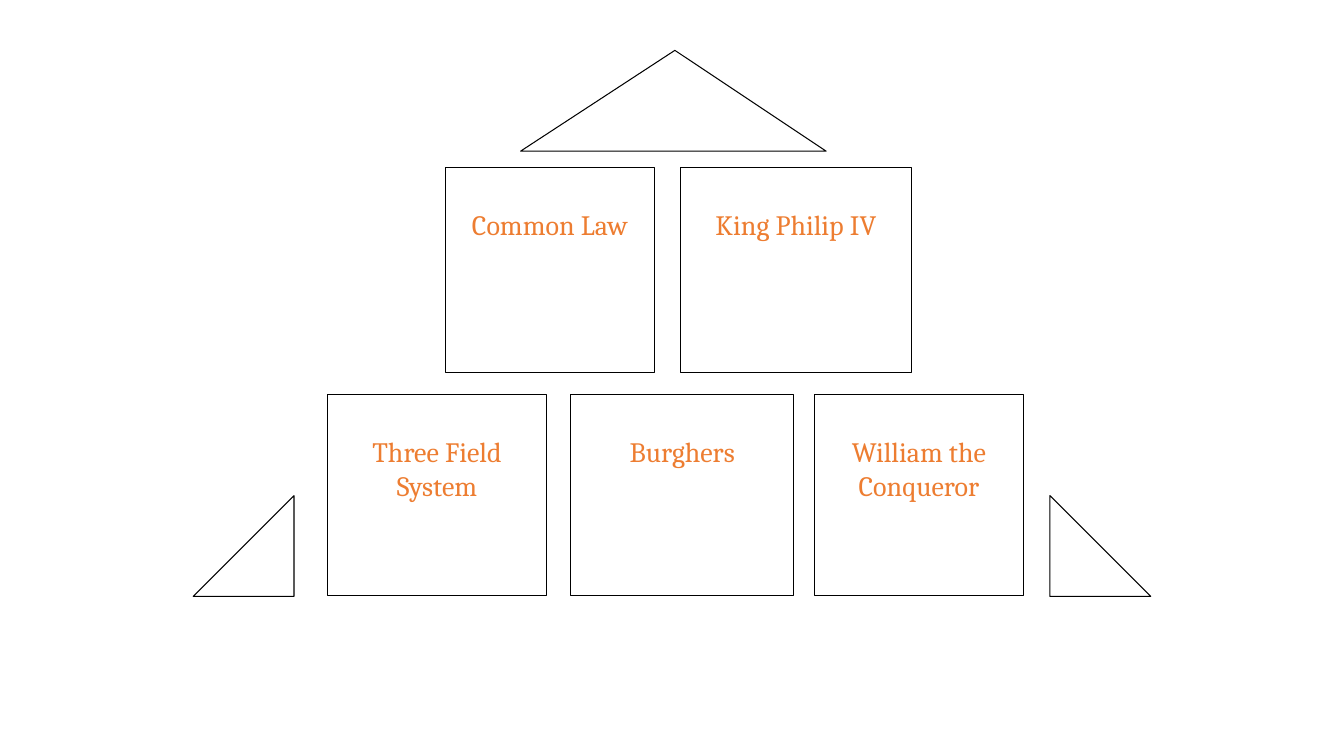
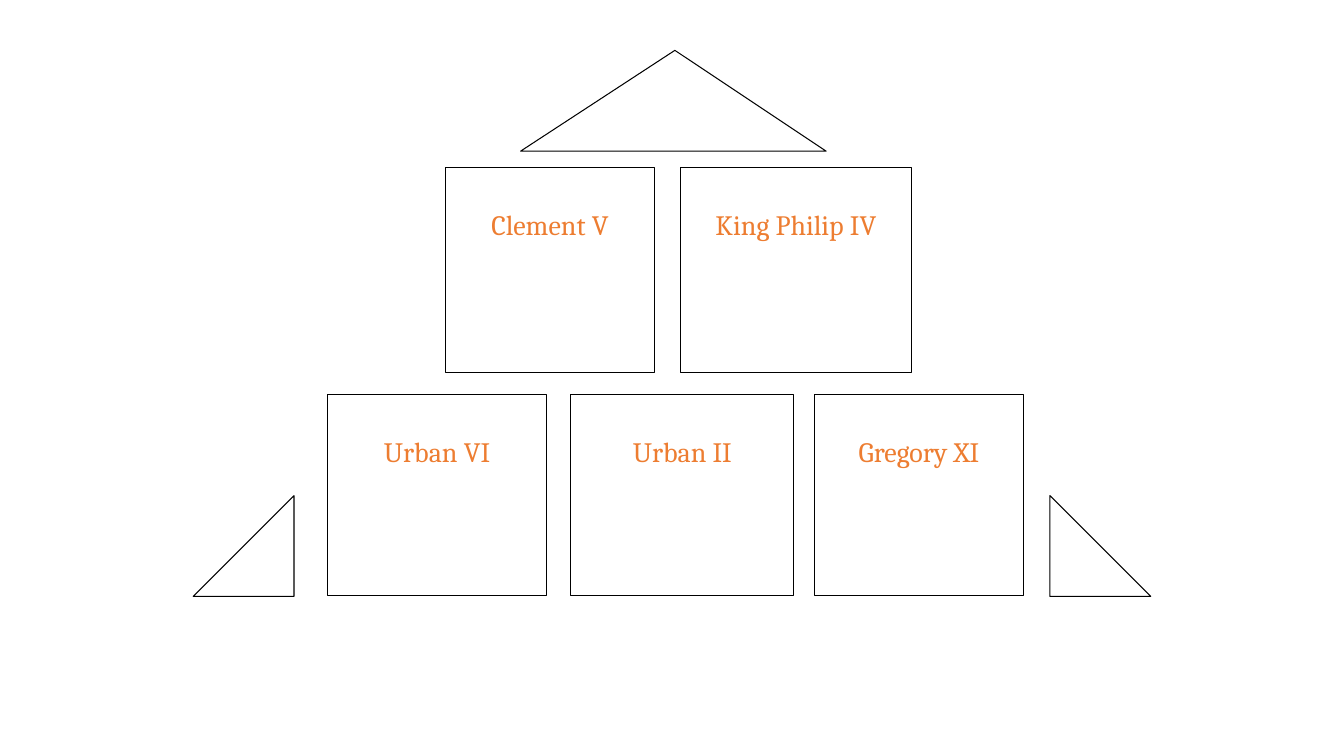
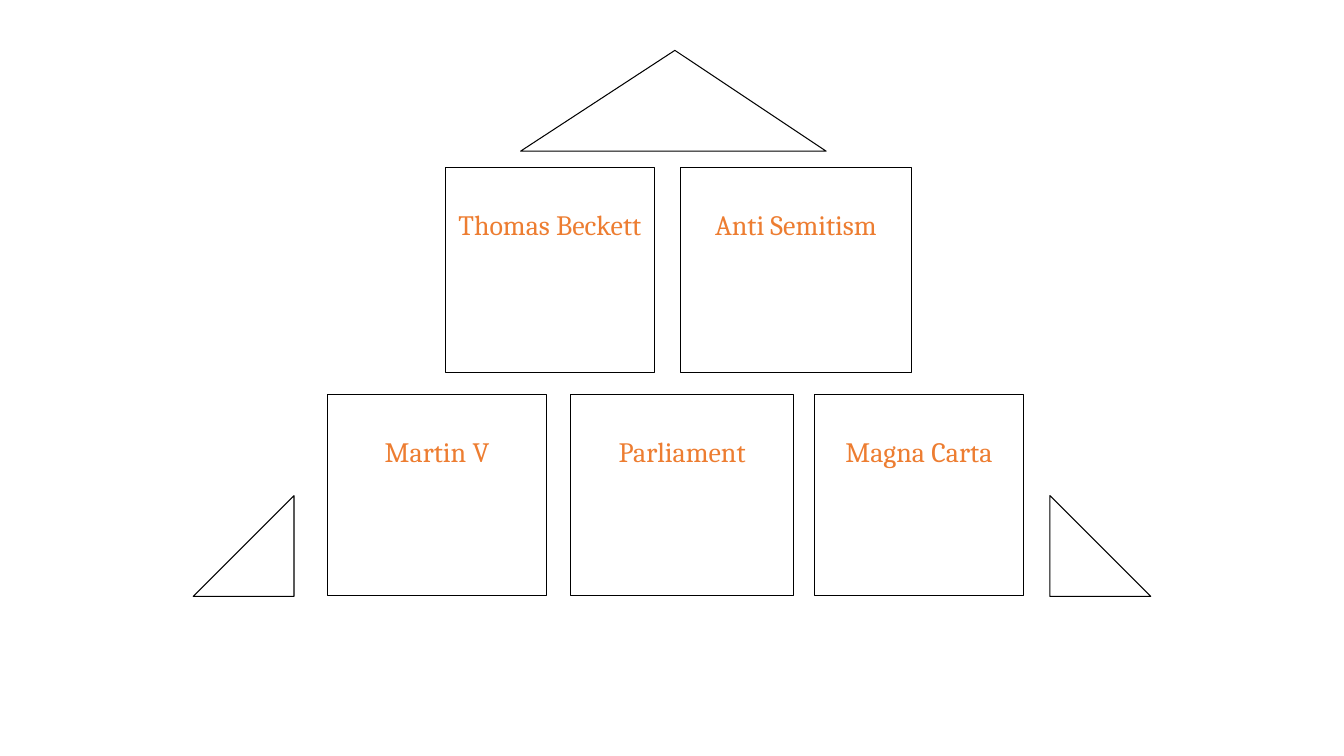
from pptx import Presentation
from pptx.dml.color import RGBColor
from pptx.enum.shapes import MSO_SHAPE
from pptx.enum.text import MSO_ANCHOR, PP_ALIGN
from pptx.util import Cm, Pt

COLORS = {"paper": "FFFFFF", "line": "000000", "text": "ED7D31"}
FONT = "Cambria"
CORNER = 2.54
UPPER = {"left": 11.22, "top": 4.23, "step": 5.93, "height": 5.16, "widths": (5.28, 5.82)}
LOWER = {"left": 8.26, "top": 9.95, "step": 6.13, "height": 5.05, "widths": (5.51, 5.61, 5.28)}
SLIDES = [
    (("Common Law", "King Philip IV"),
     ("Three Field System", "Burghers", "William the Conqueror")),
    (("Clement V", "King Philip IV"),
     ("Urban VI", "Urban II", "Gregory XI")),
    (("Thomas Beckett", "Anti Semitism"),
     ("Martin V", "Parliament", "Magna Carta")),
]


def color(name):
    return RGBColor.from_string(COLORS[name])


def add_form(slide, kind, left, top, width, height):
    form = slide.shapes.add_shape(kind, Cm(left), Cm(top), Cm(width), Cm(height))
    form.shadow.inherit = False
    form.fill.solid()
    form.fill.fore_color.rgb = color("paper")
    form.line.color.rgb = color("line")
    form.line.width = Pt(0.75)
    return form


def add_block(slide, text, left, top, width, height):
    block = add_form(slide, MSO_SHAPE.RECTANGLE, left, top, width, height)
    frame = block.text_frame
    frame.word_wrap = True
    frame.vertical_anchor = MSO_ANCHOR.TOP
    frame.margin_top = Cm(1)
    frame.text = text
    label = frame.paragraphs[0]
    label.alignment = PP_ALIGN.CENTER
    font = label.runs[0].font
    font.name = FONT
    font.size = Pt(20)
    font.color.rgb = color("text")


def add_row(slide, row, labels):
    for i, (text, width) in enumerate(zip(labels, row["widths"])):
        left = row["left"] + i * row["step"]
        add_block(slide, text, left, row["top"], width, row["height"])


def add_edges(slide):
    roof = add_form(slide, MSO_SHAPE.ISOSCELES_TRIANGLE, 13.12, 1.27, 7.7, CORNER)
    roof.adjustments[0] = 0.505
    for left, turn in ((4.87, 270), (26.46, 0)):
        corner = add_form(slide, MSO_SHAPE.RIGHT_TRIANGLE, left, 12.49, CORNER, CORNER)
        corner.rotation = turn


def main():
    deck = Presentation()
    deck.slide_width = Cm(33.87)
    deck.slide_height = Cm(19.05)
    for upper, lower in SLIDES:
        slide = deck.slides.add_slide(deck.slide_layouts[6])
        add_row(slide, UPPER, upper)
        add_row(slide, LOWER, lower)
        add_edges(slide)
    deck.save("out.pptx")


if __name__ == "__main__":
    main()
